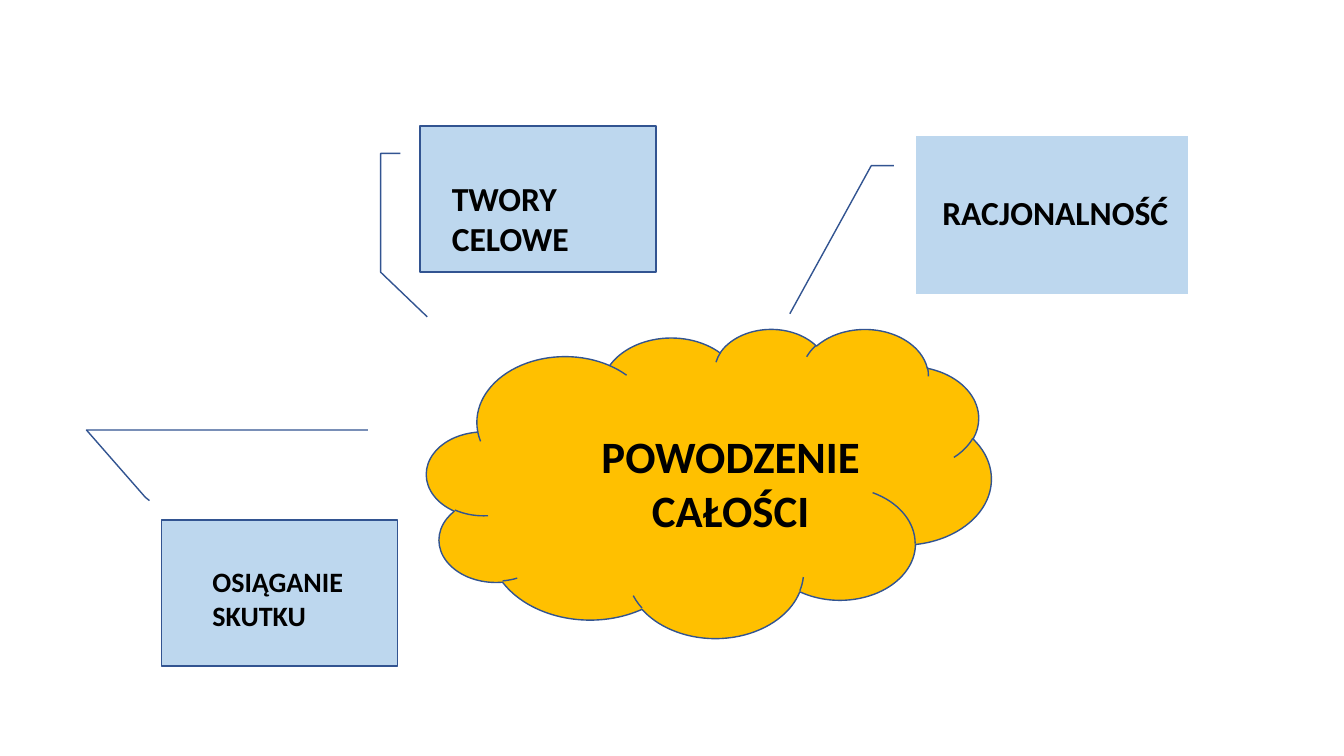
"""Build the slide on the success of the whole, with a cloud and three callouts."""
from copy import deepcopy

from pptx import Presentation
from pptx.dml.color import RGBColor
from pptx.enum.shapes import MSO_SHAPE as Shape
from pptx.enum.text import MSO_AUTO_SIZE as AutoSize, PP_ALIGN as Align
from pptx.oxml.ns import qn
from pptx.util import Inches, Pt

COLORS = {"callout": "BDD7EE", "cloud": "FFC000", "line": "325491", "text": "000000"}
FONT = "Calibri"
COLUMNS, ROWS = 16, 9

SHAPES = [
    (Shape.LINE_CALLOUT_2_NO_BORDER, (10.91, 1.62, 3.23, 1.88), "callout", {}),
    (Shape.CLOUD, (5.08, 3.91, 6.72, 3.68), "cloud", {}),
    (Shape.LINE_CALLOUT_3, (5, 1.5, 2.81, 1.74), "callout", {6: 1.306, 7: 0.031}),
]
RESULT_BOX = (1.92, 6.19, 2.81, 1.74)
RESULT_LEADER = [(4.38, 5.12), (1.03, 5.12), (1.73, 5.92), (1.78, 5.96)]
LABELS = [
    ("RACJONALNOŚĆ", (11.1, 2.22, 3.01, 0.6), 24, Align.LEFT),
    ("POWODZENIE CAŁOŚCI", (6.3, 5.05, 4.8, 1.42), 32, Align.CENTER),
    ("TWORY CELOWE", (5.26, 2.06, 2.56, 1.09), 24, Align.LEFT),
    ("OSIĄGANIE SKUTKU", (2.41, 6.66, 2.48, 0.92), 20, Align.LEFT),
]

presentation = Presentation()
presentation.slide_height = Inches(7.5)
presentation.slide_width = presentation.slide_height * COLUMNS // ROWS
slide = presentation.slides.add_slide(presentation.slide_layouts[6])
cell = presentation.slide_height / ROWS


def place(lengths):
    return [round(length * cell) for length in lengths]


def style(shape, fill):
    shape.shadow.inherit = False
    shape.fill.solid()
    shape.fill.fore_color.rgb = RGBColor.from_string(COLORS[fill])
    shape.line.color.rgb = RGBColor.from_string(COLORS["line"])
    shape.line.width = Pt(1)


def add_result_callout():
    left, top, width, height = RESULT_BOX
    right, bottom = left + width, top + height
    corners = [(right, top), (right, bottom), (left, bottom)]
    builder = slide.shapes.build_freeform(*place((left, top)))
    builder.add_line_segments([place(corner) for corner in corners], close=True)
    builder.move_to(*place(RESULT_LEADER[0]))
    builder.add_line_segments([place(point) for point in RESULT_LEADER[1:]], close=False)
    callout = builder.convert_to_shape()
    style(callout, "callout")

    box_outline = next(callout.element.iter(qn("a:path")))
    leader_outline = deepcopy(box_outline)
    leader_outline.set("fill", "none")
    box_steps = len(corners) + 2
    for step in list(box_outline)[box_steps:]:
        box_outline.remove(step)
    for step in list(leader_outline)[:box_steps]:
        leader_outline.remove(step)
    box_outline.addnext(leader_outline)


def add_label(text, area, size, alignment):
    frame = slide.shapes.add_textbox(*place(area)).text_frame
    frame.word_wrap = True
    frame.auto_size = AutoSize.SHAPE_TO_FIT_TEXT
    frame.text = text
    paragraph = frame.paragraphs[0]
    paragraph.alignment = alignment
    font = paragraph.runs[0].font
    font.name, font.size, font.bold = FONT, Pt(size), True
    font.color.rgb = RGBColor.from_string(COLORS["text"])


for kind, area, fill, adjustments in SHAPES:
    shape = slide.shapes.add_shape(kind, *place(area))
    style(shape, fill)
    for index, value in adjustments.items():
        shape.adjustments[index] = value
add_result_callout()
for label in LABELS:
    add_label(*label)

presentation.save("out.pptx")
